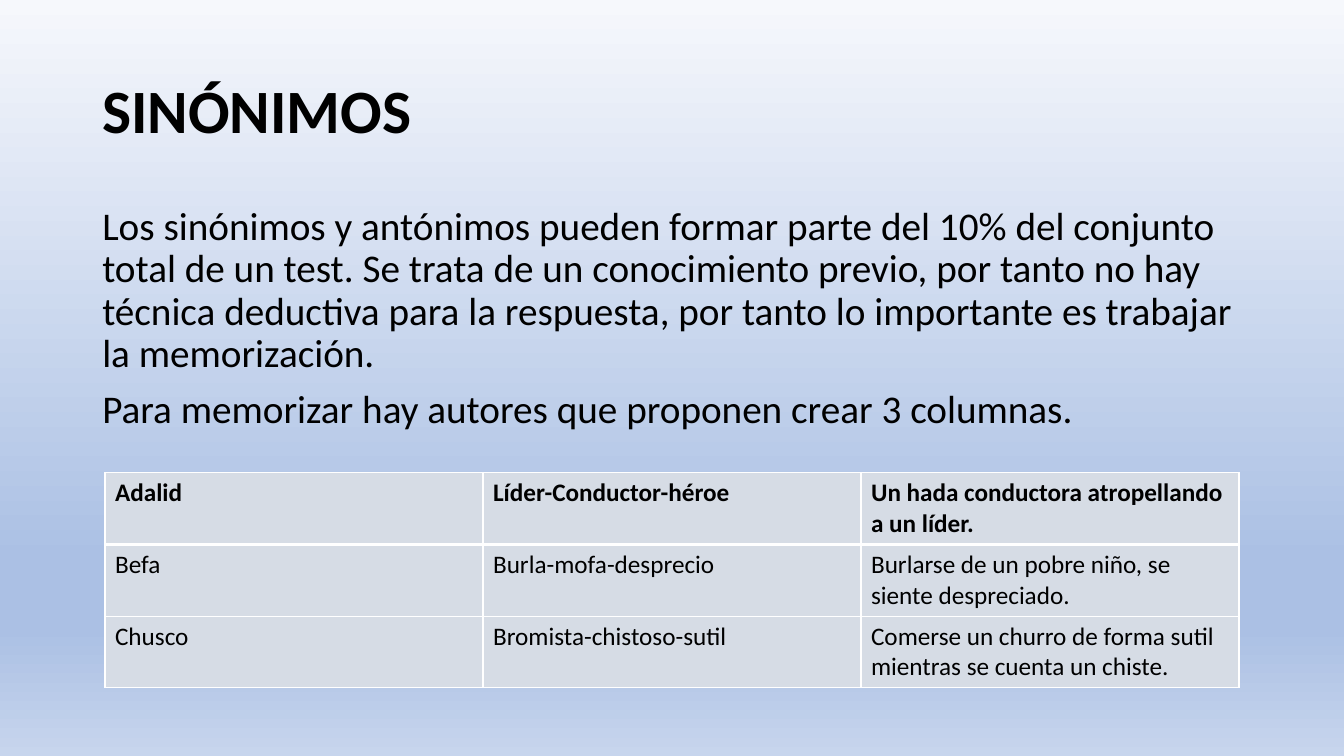
from lxml import etree
from pptx import Presentation
from pptx.dml.color import RGBColor
from pptx.enum.text import MSO_ANCHOR
from pptx.oxml.ns import qn
from pptx.util import Pt

MIDDLE = MSO_ANCHOR.MIDDLE
FONT = "Calibri"
BLACK, WHITE, CELL_GREY = "000000", "FFFFFF", "D6DCE5"
MARGIN, TEXT_WIDTH = 66, 828


def color(hex_string):
    return RGBColor.from_string(hex_string)


def format_text(frame, size, bold=False, line_spacing=None, space_before=None):
    frame.word_wrap = True
    for paragraph in frame.paragraphs:
        paragraph.line_spacing = line_spacing
        paragraph.space_before = space_before
        for run in paragraph.runs:
            run.font.name = FONT
            run.font.size = Pt(size)
            run.font.bold = bold
            run.font.color.rgb = color(BLACK)


prs = Presentation()
prs.slide_width, prs.slide_height = Pt(960), Pt(540)
slide = prs.slides.add_slide(prs.slide_layouts[6])

# Background gradient, from top to bottom
background = slide.background.fill
background.gradient()
background.gradient_angle = 270
stops = slide.element.find(".//" + qn("a:gsLst"))
for stop in list(stops):
    stops.remove(stop)
for percent, shade in [(0, "F6F8FC"), (74, "ABC0E4"), (83, "ABC0E4"), (100, "C7D5ED")]:
    stop = etree.SubElement(stops, qn("a:gs"), pos=str(percent * 1000))
    etree.SubElement(stop, qn("a:srgbClr"), val=shade)

# Title
title = slide.shapes.add_textbox(Pt(MARGIN), Pt(28.8), Pt(TEXT_WIDTH), Pt(104.4)).text_frame
title.text = "SINÓNIMOS"
title.vertical_anchor = MIDDLE
format_text(title, 44, bold=True, line_spacing=0.9)

# Explanation
explanation = slide.shapes.add_textbox(Pt(MARGIN), Pt(144), Pt(TEXT_WIDTH), Pt(342.6)).text_frame
explanation.text = (
    "Los sinónimos y antónimos pueden formar parte del 10% del conjunto total de un test. "
    "Se trata de un conocimiento previo, por tanto no hay técnica deductiva para la respuesta, "
    "por tanto lo importante es trabajar la memorización.\n"
    "Para memorizar hay autores que proponen crear 3 columnas."
)
format_text(explanation, 28, line_spacing=0.9, space_before=Pt(10))

# Table: word, synonyms, memory aid
synonyms = [
    ("Adalid", "Líder-Conductor-héroe", "Un hada conductora atropellando a un líder."),
    ("Befa", "Burla-mofa-desprecio", "Burlarse de un pobre niño, se siente despreciado."),
    ("Chusco", "Bromista-chistoso-sutil",
     "Comerse un churro de forma sutil mientras se cuenta un chiste."),
]
table = slide.shapes.add_table(3, 3, Pt(75), Pt(337.7), Pt(810), Pt(153.6)).table
for row, words in enumerate(synonyms):
    for column, words_in_cell in enumerate(words):
        cell = table.cell(row, column)
        cell.text_frame.text = words_in_cell
        format_text(cell.text_frame, 18, bold=row == 0)

        # White borders, thicker under the first row
        widths = {"lnL": 1, "lnR": 1, "lnT": 3 if row == 1 else 1, "lnB": 3 if row == 0 else 1}
        properties = cell._tc.get_or_add_tcPr()
        for side, width in widths.items():
            border = etree.SubElement(properties, qn("a:" + side), w=str(Pt(width)))
            line_fill = etree.SubElement(border, qn("a:solidFill"))
            etree.SubElement(line_fill, qn("a:srgbClr"), val=WHITE)
        cell.fill.solid()
        cell.fill.fore_color.rgb = color(CELL_GREY)

prs.save("out.pptx")
